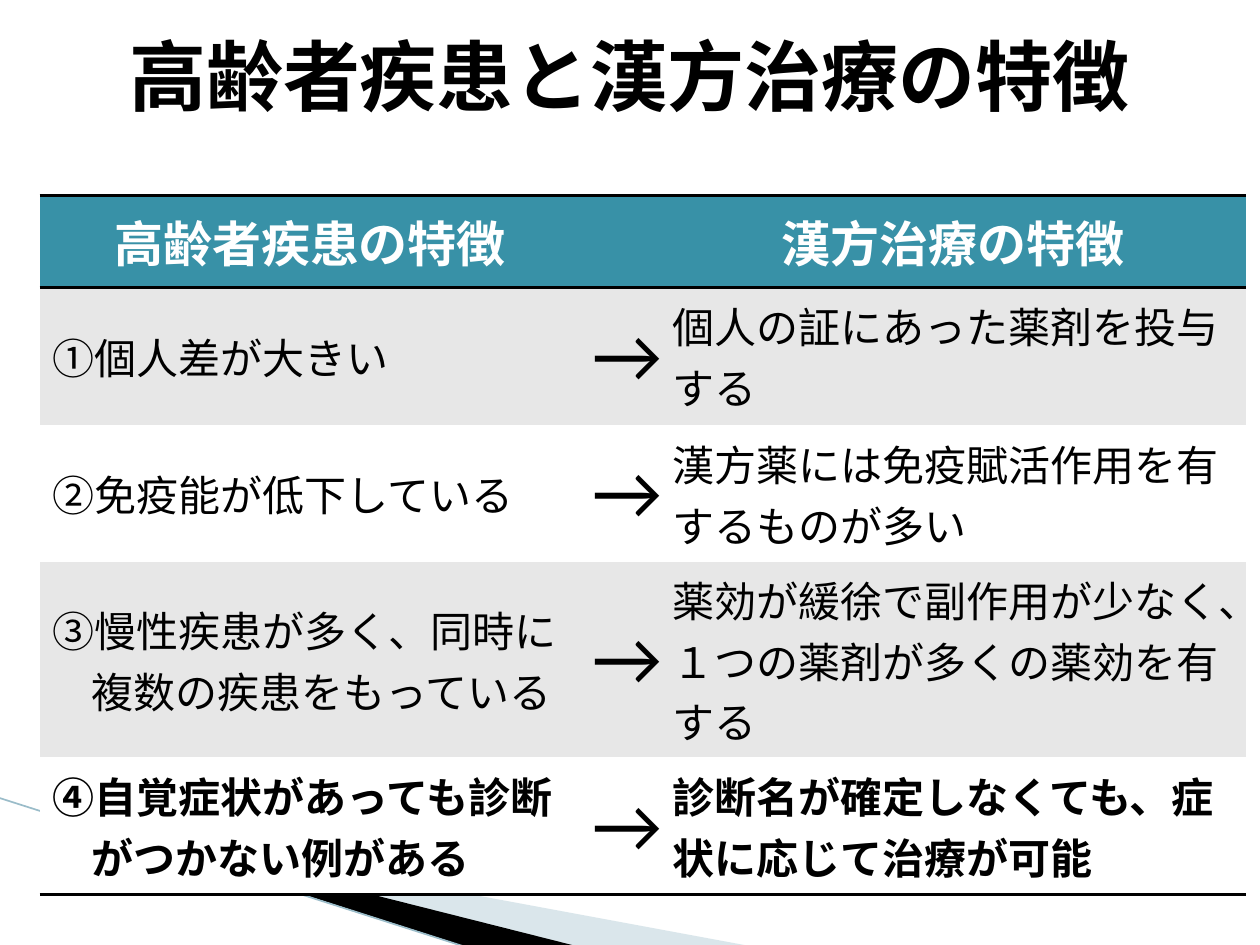
from dataclasses import dataclass

from lxml import etree
from pptx import Presentation
from pptx.dml.color import RGBColor
from pptx.enum.text import MSO_ANCHOR, PP_ALIGN
from pptx.enum.shapes import MSO_CONNECTOR
from pptx.oxml.ns import qn
from pptx.util import Cm, Pt

MID = MSO_ANCHOR.MIDDLE
LEFT, CENTER = PP_ALIGN.LEFT, PP_ALIGN.CENTER
STRAIGHT = MSO_CONNECTOR.STRAIGHT
NO_STYLE = "{2D5ABB26-0587-4C30-8999-92F81FD0307C}"


@dataclass(frozen=True)
class Theme:
    ink: str = "000000"
    white: str = "FFFFFF"
    head: str = "3891A7"
    band: str = "E7E7E7"
    pale: str = "A3C2CE"
    edge: str = "9ABCC9"
    title_font: str = "Arial"
    body_font: str = "Calibri"
    big: int = 44
    mid: int = 28
    body: int = 24
    rule: int = 2


THEME = Theme()

TITLE = "高齢者疾患と漢方治療の特徴"
HEADS = ["高齢者疾患の特徴", "", "漢方治療の特徴"]
ROWS = [
    (["①個人差が大きい"], "個人の証にあった薬剤を投与する"),
    (["②免疫能が低下している"], "漢方薬には免疫賦活作用を有するものが多い"),
    (["③慢性疾患が多く、同時に", "複数の疾患をもっている"],
     "薬効が緩徐で副作用が少なく、１つの薬剤が多くの薬効を有する"),
    (["④自覚症状があっても診断", "がつかない例がある"],
     "診断名が確定しなくても、症状に応じて治療が可能"),
]
COLS = [10.9, 1.6, 11.81]
HEAD_H, ROW_H = 1.85, 2.77
INDENT = 0.8


def rgb(code):
    return RGBColor.from_string(code)


def write(para, text, size, color, font, bold=False, align=LEFT):
    para.alignment = align
    run = para.add_run()
    run.text = text
    run.font.size = Pt(size)
    run.font.bold = bold
    run.font.name = font
    run.font.color.rgb = rgb(color)


def add_rule(cell, side):
    """Draw a border on the top (lnT) or bottom (lnB) of a cell."""
    line = etree.Element(qn("a:" + side), w=str(Pt(THEME.rule)))
    fill = etree.SubElement(line, qn("a:solidFill"))
    etree.SubElement(fill, qn("a:srgbClr"), val=THEME.ink)
    cell._tc.get_or_add_tcPr().insert(0, line)


def fill_cell(cell, lines, fill, size, color, bold, align, sides):
    cell.vertical_anchor = MID
    cell.fill.solid()
    cell.fill.fore_color.rgb = rgb(fill)
    for side in sides:
        add_rule(cell, side)
    frame = cell.text_frame
    for i, text in enumerate(lines):
        para = frame.add_paragraph() if i else frame.paragraphs[0]
        if i:
            para._p.get_or_add_pPr().set("marL", str(Cm(INDENT)))
        if text:
            write(para, text, size, color, THEME.body_font, bold, align)


def add_band(slide, left, top, points, color, alpha=None):
    spots = [(Cm(left + x), Cm(top + y)) for x, y in points]
    pen = slide.shapes.build_freeform(*spots[0])
    pen.add_line_segments(spots[1:], close=True)
    band = pen.convert_to_shape()
    band.shadow.inherit = False
    band.line.fill.background()
    band.fill.solid()
    band.fill.fore_color.rgb = rgb(color)
    if alpha:
        tint = band.fill._xPr.find(".//" + qn("a:srgbClr"))
        etree.SubElement(tint, qn("a:alpha"), val=str(alpha * 1000))


def add_decor(slide, left, top):
    """Draw the sweep at the bottom left corner."""
    add_band(slide, left, top,
             [(1.4, 0.48), (15.11, 3.02), (11.58, 3.02), (1.4, 0.46)],
             THEME.pale, 40)
    add_band(slide, left, top,
             [(1.35, 0.43), (11.61, 3.02), (9.45, 3.05), (1.37, 0.46)],
             THEME.ink)
    line = slide.shapes.add_connector(
        STRAIGHT, Cm(left - 0.03), Cm(top + 0.03),
        Cm(left + 9.42), Cm(top + 3.05))
    line.line.color.rgb = rgb(THEME.edge)
    line.line.width = Pt(0.95)
    etree.SubElement(line._element.spPr, qn("a:effectLst"))


def add_title(slide, left, top, width, height):
    title = slide.shapes.title
    title.left, title.top = Cm(left), Cm(top)
    title.width, title.height = Cm(width), Cm(height)
    frame = title.text_frame
    frame.vertical_anchor = MID
    write(frame.paragraphs[0], TITLE, THEME.big, THEME.ink,
          THEME.title_font, True, CENTER)


def add_grid(slide, left, top):
    count = len(ROWS) + 1
    height = HEAD_H + ROW_H * len(ROWS)
    table = slide.shapes.add_table(count, len(COLS), Cm(left), Cm(top),
                                   Cm(sum(COLS)), Cm(height)).table
    table._tbl.tblPr.find(qn("a:tableStyleId")).text = NO_STYLE
    table.horz_banding = False
    for col, width in zip(table.columns, COLS):
        col.width = Cm(width)
    for i, row in enumerate(table.rows):
        row.height = Cm(ROW_H if i else HEAD_H)

    for j, head in enumerate(HEADS):
        fill_cell(table.cell(0, j), [head], THEME.head, THEME.mid,
                  THEME.white, True, CENTER, ["lnB", "lnT"])
    for i, (trait, cure) in enumerate(ROWS, 1):
        last = i == len(ROWS)
        fill = THEME.band if i % 2 else THEME.white
        sides = ["lnB"] if last else []
        parts = [(trait, THEME.body, last, LEFT),
                 (["→"], THEME.big, False, CENTER),
                 ([cure], THEME.body, last, LEFT)]
        for j, (lines, size, bold, align) in enumerate(parts):
            fill_cell(table.cell(i, j), lines, fill, size, THEME.ink,
                      bold, align, sides)


def main():
    deck = Presentation()
    deck.slide_width, deck.slide_height = Cm(25.4), Cm(19.05)
    slide = deck.slides.add_slide(deck.slide_layouts[5])
    add_decor(slide, 0, 16.05)
    add_title(slide, 0, 0.36, 25.4, 2.31)
    add_grid(slide, 0.8, 3.94)
    deck.save("out.pptx")


if __name__ == "__main__":
    main()
